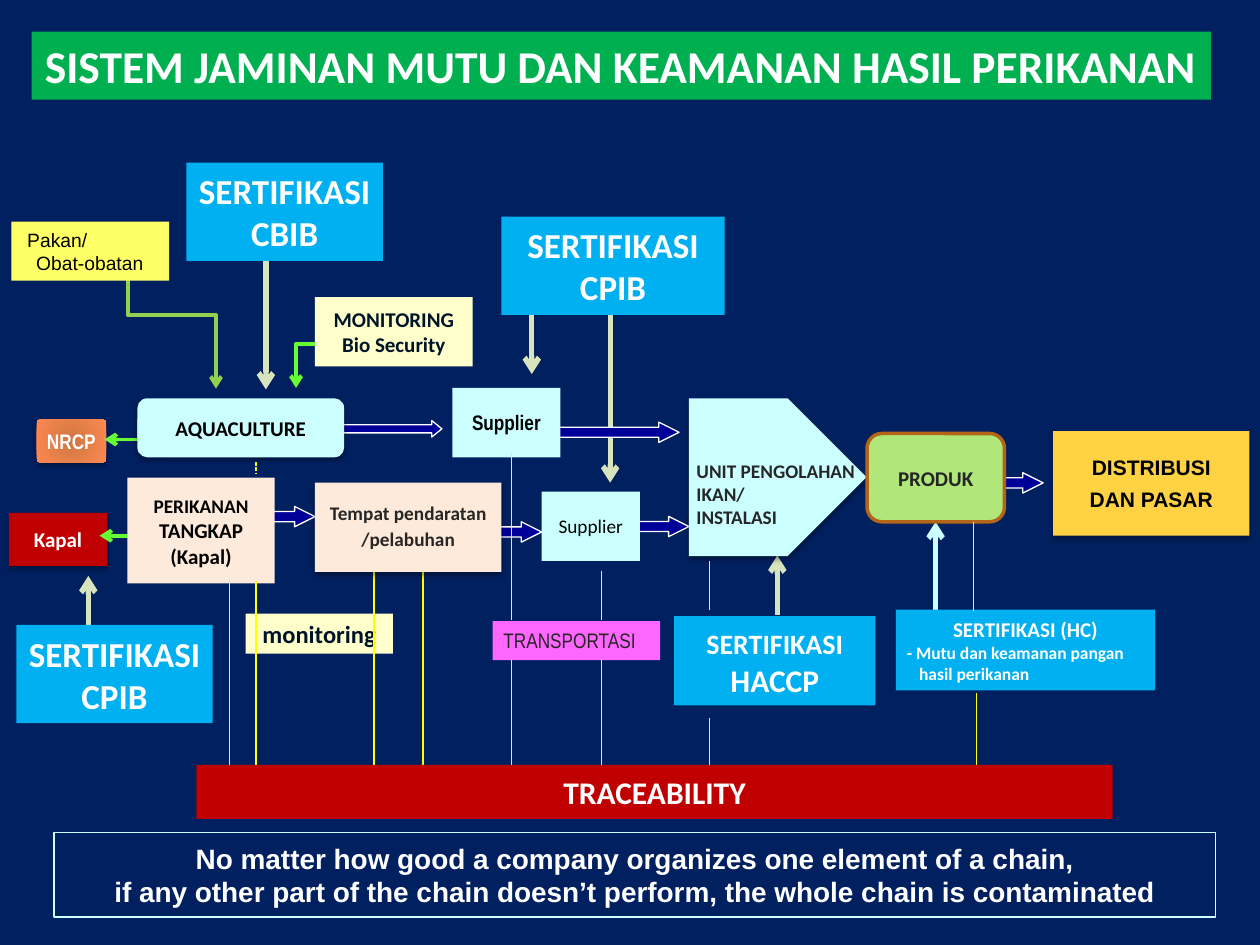
from lxml import etree
from pptx import Presentation
from pptx.dml.color import RGBColor
from pptx.enum.dml import MSO_LINE
from pptx.enum.shapes import MSO_CONNECTOR, MSO_SHAPE
from pptx.enum.text import MSO_ANCHOR, PP_ALIGN
from pptx.oxml.ns import qn
from pptx.util import Cm, Pt

RECT, ROUNDED = MSO_SHAPE.RECTANGLE, MSO_SHAPE.ROUNDED_RECTANGLE
PENTAGON, ARROW = MSO_SHAPE.PENTAGON, MSO_SHAPE.RIGHT_ARROW
STRAIGHT, ELBOW = MSO_CONNECTOR.STRAIGHT, MSO_CONNECTOR.ELBOW
LEFT, CENTER = PP_ALIGN.LEFT, PP_ALIGN.CENTER
MIDDLE = MSO_ANCHOR.MIDDLE
DASH = MSO_LINE.SQUARE_DOT

NAVY = RGBColor(0x00, 0x20, 0x60)
WHITE = RGBColor(0xFF, 0xFF, 0xFF)
BLACK = RGBColor(0x00, 0x00, 0x00)
DARK = RGBColor(0x26, 0x26, 0x26)
INK = RGBColor(0x00, 0x14, 0x29)
SKY = RGBColor(0x00, 0xB0, 0xF0)
AQUA = RGBColor(0xCC, 0xFF, 0xFF)
CREAM = RGBColor(0xFF, 0xFF, 0xCC)
PEACH = RGBColor(0xFD, 0xEA, 0xDA)
RED = RGBColor(0xC0, 0x00, 0x00)
GREEN = RGBColor(0x00, 0xB0, 0x50)
LIME = RGBColor(0x66, 0xFF, 0x33)
LEAF = RGBColor(0x92, 0xD0, 0x50)
SAGE = RGBColor(0xD7, 0xE4, 0xBD)
PISTACHIO = RGBColor(0xB0, 0xE6, 0x7A)
BROWN = RGBColor(0xB5, 0x65, 0x16)
YELLOW = RGBColor(0xFF, 0xFF, 0x00)
LEMON = RGBColor(0xFF, 0xFF, 0x66)
GOLD = RGBColor(0xFF, 0xD2, 0x43)
PINK = RGBColor(0xFF, 0x66, 0xFF)
BLUE = RGBColor(0x00, 0x00, 0x99)
RUST = RGBColor(0xCE, 0x77, 0x42)
ORANGE = RGBColor(0xFF, 0x89, 0x51)


class Diagram:
    """Draws the elements of the chain on one page."""

    font = "Calibri"
    inset = Cm(0.22)

    def __init__(self, page):
        self.page = page
        page.background.fill.solid()
        page.background.fill.fore_color.rgb = NAVY

    def shape(self, at, fill=None, kind=RECT, line=None, width=0.75, shadow=False):
        shape = self.page.shapes.add_shape(kind, *map(Cm, at))
        shape.shadow.inherit = False
        if fill is None:
            shape.fill.background()
        else:
            shape.fill.solid()
            shape.fill.fore_color.rgb = fill
        if line is None:
            shape.line.fill.background()
        else:
            shape.line.color.rgb = line
            shape.line.width = Pt(width)
        if shadow:
            self.drop_shadow(shape)
        return shape

    def drop_shadow(self, shape):
        effects = shape._element.spPr.find(qn("a:effectLst"))
        outer = etree.SubElement(effects, qn("a:outerShdw"), blurRad="39400",
                                 dist="23000", dir="5400000", rotWithShape="0")
        color = etree.SubElement(outer, qn("a:srgbClr"), val="000000")
        etree.SubElement(color, qn("a:alpha"), val="35000")

    def box(self, at, fill, lines, size, color, bold=True, font=None,
            align=CENTER, wrap=True, gap=0, spacing=None, **look):
        """Each line is a string or a list of (text, size) spans."""
        shape = self.shape(at, fill, **look)
        frame = shape.text_frame
        frame.word_wrap = wrap
        frame.vertical_anchor = MIDDLE
        frame.margin_left = frame.margin_right = self.inset
        frame.margin_top = frame.margin_bottom = Cm(0.1)
        for number, line in enumerate(lines):
            para = frame.add_paragraph() if number else frame.paragraphs[0]
            para.alignment = align
            if number and gap:
                para.space_before = Pt(gap)
            if spacing:
                para.line_spacing = spacing
            para.font.name = font or self.font
            para.font.size = Pt(size)
            para.font.bold = bold
            para.font.color.rgb = color
            if isinstance(line, str):
                para.text = line
                continue
            for text, span_size in line:
                span = para.add_run()
                span.text = text
                span.font.size = Pt(span_size)
        return shape

    def indent(self, para, left, first=0):
        properties = para._p.get_or_add_pPr()
        properties.set("marL", str(Cm(left)))
        properties.set("indent", str(Cm(first)))

    def radial(self, shape, inner, outer):
        shape.fill.gradient()
        for stop, color in zip(shape.fill.gradient_stops, (inner, outer)):
            stop.color.rgb = color
        gradient = shape._element.spPr.find(qn("a:gradFill"))
        gradient.remove(gradient.find(qn("a:lin")))
        route = etree.SubElement(gradient, qn("a:path"), path="circle")
        etree.SubElement(route, qn("a:fillToRect"),
                         {side: "100000" for side in "ltrb"})

    def line(self, points, color, width=0.75, kind=STRAIGHT, head=False):
        line = self.page.shapes.add_connector(kind, *map(Cm, points))
        line.line.color.rgb = color
        line.line.width = Pt(width)
        properties = line._element.spPr
        if head:
            etree.SubElement(properties.find(qn("a:ln")), qn("a:tailEnd"), type="arrow")
        etree.SubElement(properties, qn("a:effectLst"))
        return line

    def flow(self, x, y, width=1.19, height=0.41, point=1.0):
        arrow = self.shape((x, y, width, height), BLUE, ARROW, WHITE)
        arrow.adjustments[1] = point


def build():
    deck = Presentation()
    deck.slide_width, deck.slide_height = Cm(25.4), Cm(19.05)
    page = deck.slides.add_slide(deck.slide_layouts[6])
    chain = Diagram(page)

    # Boxes that sit under the arrowheads
    chain.box((0.18, 10.34, 1.98, 1.07), RED, ["Kapal"], 12, WHITE, wrap=False, shadow=True)
    nrcp = chain.box((0.74, 8.46, 1.4, 0.86), RUST, ["NRCP"], 12, WHITE,
                     font="Arial Narrow", wrap=False, shadow=True)
    chain.radial(nrcp, RUST, ORANGE)

    # Certification arrows
    for x, start, end, color in [
        (1.78, 12.6, 11.61, SAGE), (15.67, 12.4, 11.2, SAGE), (5.36, 5.23, 7.85, SAGE),
        (10.72, 6.32, 7.54, SAGE), (12.3, 5.77, 9.73, SAGE), (18.86, 12.29, 10.52, AQUA),
    ]:
        chain.line((x, start, x, end), color, 3, head=True)

    # Monitoring and feed elbows
    for points in [(3.4, 10.41, 2.01, 10.8), (3.51, 8.46, 2.11, 8.86)]:
        chain.line(points, LIME, 2.25, ELBOW, head=True)
    feed = chain.line((4.95, 5.46, 1.98, 7.24), LEAF, 2.25, ELBOW, head=True)
    feed._element.spPr.find(qn("a:xfrm")).set("rot", "16200000")
    security = chain.line((6.76, 6.93, 5.97, 7.82), LIME, 2.25, ELBOW, head=True)
    security._element.spPr.find(qn("a:prstGeom")).set("prst", "bentConnector2")

    # Flow arrows
    for x, y in [(5.16, 10.21), (12.7, 10.41), (19.84, 9.53), (9.73, 10.52)]:
        chain.flow(x, y)
    chain.flow(10.31, 8.51, 3.38)
    chain.flow(5.56, 8.48, 3.35, 0.33, 0.62)

    # Certificates
    for x, y, width, name in [(3.76, 3.28, 3.96, "CBIB"), (0.33, 12.6, 3.96, "CPIB"),
                              (10.11, 4.37, 4.5, "CPIB")]:
        chain.box((x, y, width, 1.98), SKY, [f"SERTIFIKASI {name}"], 20, WHITE)
    chain.box((13.59, 12.42, 4.06, 1.8), SKY,
              [[("SERTIFIKASI", 16), (" HACCP", 18)]], 16, WHITE)
    health = chain.box((18.06, 12.29, 5.23, 1.63), SKY, [
        "SERTIFIKASI (HC)",
        [("- Mutu dan keamanan pangan hasil perikanan", 10)]], 12, WHITE)
    scope = health.text_frame.paragraphs[1]
    scope.alignment = LEFT
    chain.indent(scope, 0.25, -0.25)

    # Inputs and monitoring
    inputs = chain.box((0.23, 4.47, 3.18, 1.19), LEMON, ["Pakan/", "Obat-obatan"], 11,
                       BLACK, bold=False, font="Arial", align=LEFT)
    for para, left in zip(inputs.text_frame.paragraphs, (0.1, 0.28)):
        chain.indent(para, left)
    chain.box((6.35, 5.99, 3.18, 1.4), CREAM, ["MONITORING", "Bio Security"], 12, INK, wrap=False)
    chain.box((4.95, 12.37, 2.97, 0.81), CREAM, ["monitoring"], 14, INK, wrap=False)
    chain.box((9.93, 12.52, 3.38, 0.79), PINK, ["TRANSPORTASI"], 12, DARK,
              bold=False, font="Arial Narrow", align=LEFT)

    # Links of the chain
    chain.box((2.57, 9.63, 2.97, 2.13), PEACH,
              [[("PERIKANAN", 11), (" TANGKAP", 12)], "(Kapal)"], 12, BLACK)
    chain.box((9.12, 7.82, 2.18, 1.4), AQUA, ["Supplier"], 12, BLACK, font="Arial Narrow")
    chain.box((10.92, 9.91, 1.98, 1.4), AQUA, ["Supplier"], 11, BLACK, bold=False)
    chain.shape((13.89, 8.03, 3.58, 3.18), AQUA, PENTAGON, shadow=True)
    chain.box((13.82, 9.12, 3.76, 1.68), None,
              ["UNIT PENGOLAHAN IKAN/", "INSTALASI"], 11, DARK, align=LEFT)
    chain.box((17.48, 8.74, 2.77, 1.78), PISTACHIO, ["PRODUK"], 12, DARK,
              kind=ROUNDED, line=BROWN, width=2)
    chain.box((21.23, 8.69, 3.96, 2.11), GOLD, ["DISTRIBUSI", "DAN PASAR"], 12, BLACK,
              font="Arial", wrap=False, gap=4, shadow=True)

    # Traceability lines
    bottom = 15.88
    for x, start, end in [
        (4.62, 11.71, bottom), (5.16, 11.71, bottom), (8.53, 11.3, bottom),
        (7.54, 11.51, bottom), (10.31, 9.12, 12.5), (10.31, 13.28, bottom),
        (12.12, 11.51, 12.5), (12.12, 13.28, bottom), (14.3, 11.3, 12.29),
        (14.3, 14.48, bottom), (19.63, 10.52, 12.32), (19.69, 13.97, bottom),
    ]:
        chain.line((x, start, x, end), YELLOW)
    chain.line((5.16, 9.32, 5.16, 9.53), YELLOW).line.dash_style = DASH

    # Boxes over the traceability lines
    chain.box((2.77, 8.03, 4.17, 1.19), AQUA, ["AQUACULTURE"], 12, BLACK,
              kind=ROUNDED, shadow=True)
    chain.box((6.35, 9.73, 3.76, 1.8), PEACH, ["Tempat pendaratan", "/pelabuhan"], 11, DARK,
              wrap=False, gap=3, spacing=0.9, shadow=True)
    chain.box((3.96, 15.42, 18.47, 1.09), RED, ["TRACEABILITY"], 18, WHITE, wrap=False)

    # Title and closing statement
    chain.box((0.64, 0.64, 23.77, 1.37), GREEN,
              ["SISTEM JAMINAN MUTU DAN KEAMANAN HASIL PERIKANAN"], 26, WHITE, wrap=False)
    chain.box((1.09, 16.79, 23.42, 1.7), None, [
        "No matter how good a company organizes one element of a chain,",
        "if any other part of the chain doesn’t perform, the whole chain is contaminated",
    ], 16, WHITE, font="Arial", line=AQUA)

    deck.save("out.pptx")


if __name__ == "__main__":
    build()
